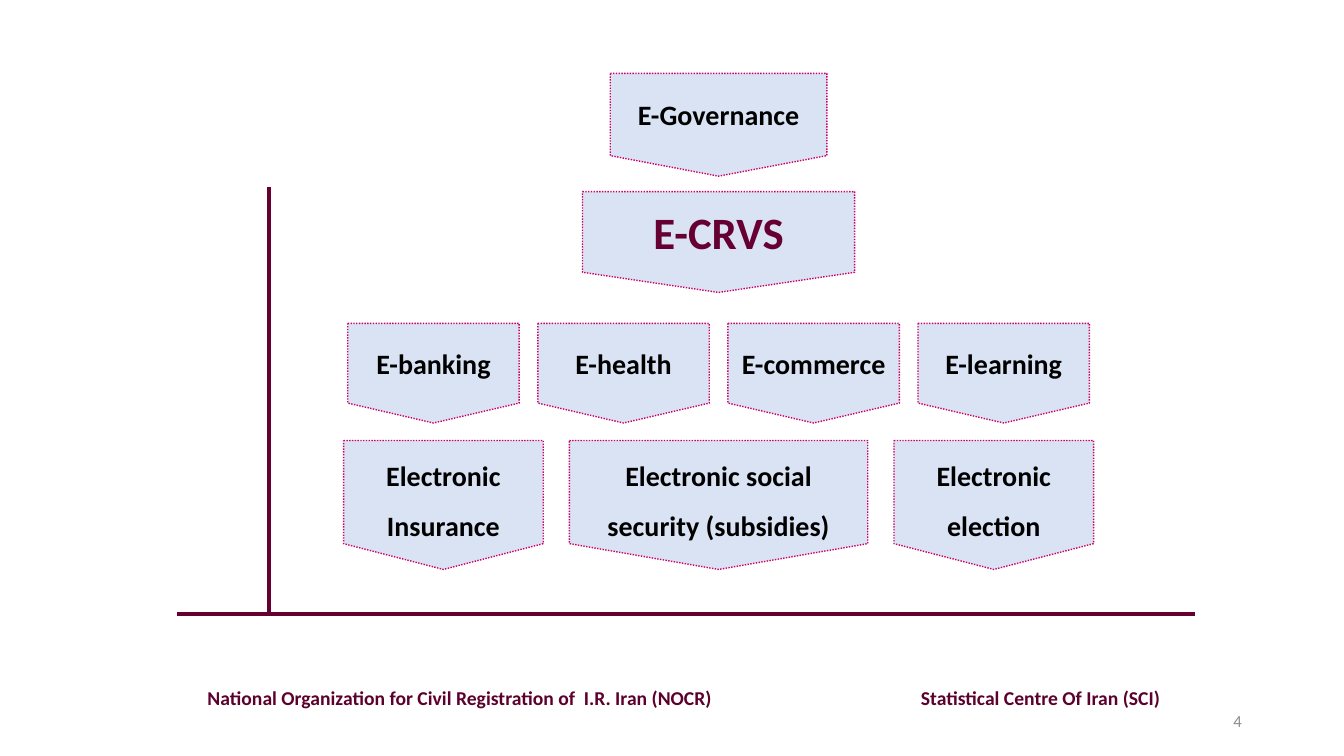
from pptx import Presentation
from pptx.dml.color import RGBColor
from pptx.enum.dml import MSO_LINE
from pptx.enum.shapes import MSO_CONNECTOR, MSO_SHAPE
from pptx.enum.text import MSO_ANCHOR, PP_ALIGN
from pptx.oxml.ns import qn
from pptx.util import Cm, Pt
from lxml import etree

PENTAGON = MSO_SHAPE.FLOWCHART_OFFPAGE_CONNECTOR
STRAIGHT = MSO_CONNECTOR.STRAIGHT
DOTTED = MSO_LINE.ROUND_DOT
TOP, MIDDLE = MSO_ANCHOR.TOP, MSO_ANCHOR.MIDDLE
LEFT, CENTER, RIGHT = PP_ALIGN.LEFT, PP_ALIGN.CENTER, PP_ALIGN.RIGHT

BLACK = RGBColor(0x00, 0x00, 0x00)
GRAY = RGBColor(0x8C, 0x8C, 0x8C)
PALE_BLUE = RGBColor(0xDA, 0xE3, 0xF3)
PINK = RGBColor(0xCC, 0x00, 0x66)
PLUM = RGBColor(0x66, 0x00, 0x33)
DARK_PLUM = RGBColor(0x5C, 0x00, 0x2E)

DIAGRAM_CENTER = 18.11


class SlideBuilder:
    """Hold the shared style and draw elements on the current slide."""

    font_name = "Calibri"

    def __init__(self, slide):
        """Remember the slide to draw on."""
        self.slide = slide

    def add_text(self, shape, text, size, color, bold=True, align=LEFT, anchor=TOP, spacing=None):
        """Put one formatted run of text into a shape."""
        frame = shape.text_frame
        frame.word_wrap = True
        frame.vertical_anchor = anchor
        paragraph = frame.paragraphs[0]
        paragraph.alignment = align
        if spacing:
            paragraph.line_spacing = spacing
        run = paragraph.add_run()
        run.text = text
        run.font.name = self.font_name
        run.font.size = Pt(size)
        run.font.bold = bold
        run.font.color.rgb = color

    def label(self, text, left, top, width, height, size, color, **style):
        """Add a text box."""
        box = self.slide.shapes.add_textbox(Cm(left), Cm(top), Cm(width), Cm(height))
        self.add_text(box, text, size, color, **style)

    def axis(self, start_x, start_y, end_x, end_y):
        """Add a thick straight line."""
        line = self.slide.shapes.add_connector(
            STRAIGHT, Cm(start_x), Cm(start_y), Cm(end_x), Cm(end_y))
        line.line.color.rgb = PLUM
        line.line.width = Pt(3)
        properties = line.element.find(qn("p:spPr"))
        etree.SubElement(properties, qn("a:effectLst"))

    def pentagon(self, text, left, top, width, height, size, color, spacing):
        """Add a dotted box that points down."""
        shape = self.slide.shapes.add_shape(
            PENTAGON, Cm(left), Cm(top), Cm(width), Cm(height))
        shape.shadow.inherit = False
        shape.fill.solid()
        shape.fill.fore_color.rgb = PALE_BLUE
        shape.line.color.rgb = PINK
        shape.line.width = Pt(1)
        shape.line.dash_style = DOTTED
        self.add_text(shape, text, size, color, align=CENTER, anchor=MIDDLE, spacing=spacing)

    def row(self, boxes, top, height, gap=0, size=20, color=BLACK, spacing=None):
        """Add a centred row of pentagons given as text and width pairs."""
        total = sum(width for _, width in boxes) + gap * (len(boxes) - 1)
        left = DIAGRAM_CENTER - total / 2
        for text, width in boxes:
            self.pentagon(text, left, top, width, height, size, color, spacing)
            left += width + gap


def main():
    """Build and save the presentation."""
    presentation = Presentation()
    presentation.slide_width = Cm(33.87)
    presentation.slide_height = Cm(19.05)
    builder = SlideBuilder(presentation.slides.add_slide(presentation.slide_layouts[6]))

    builder.axis(6.78, 4.72, 6.78, 15.47)
    builder.axis(4.47, 15.47, 30.12, 15.47)

    builder.row([("E-Governance", 5.46)], 1.85, 2.59)
    builder.row([("E-CRVS", 6.86)], 4.83, 2.54, size=32, color=PLUM)
    services = ["E-banking", "E-health", "E-commerce", "E-learning"]
    builder.row([(service, 4.32) for service in services], 8.15, 2.51, gap=0.47)
    builder.row(
        [("Electronic Insurance", 5.03),
         ("Electronic social security (subsidies)", 7.52),
         ("Electronic election", 5.03)],
        11.1, 3.25, gap=0.66, spacing=1.5)

    builder.label("National Organization for Civil Registration of  I.R. Iran (NOCR)",
                  4.98, 17.17, 16.64, 1.45, 14, DARK_PLUM)
    builder.label("Statistical Centre Of Iran (SCI)",
                  22.96, 17.15, 6.73, 1.45, 14, DARK_PLUM)
    builder.label("4", 23.93, 17.65, 7.62, 1.02, 12, GRAY,
                  bold=False, align=RIGHT, anchor=MIDDLE)

    presentation.save("out.pptx")


if __name__ == "__main__":
    main()
